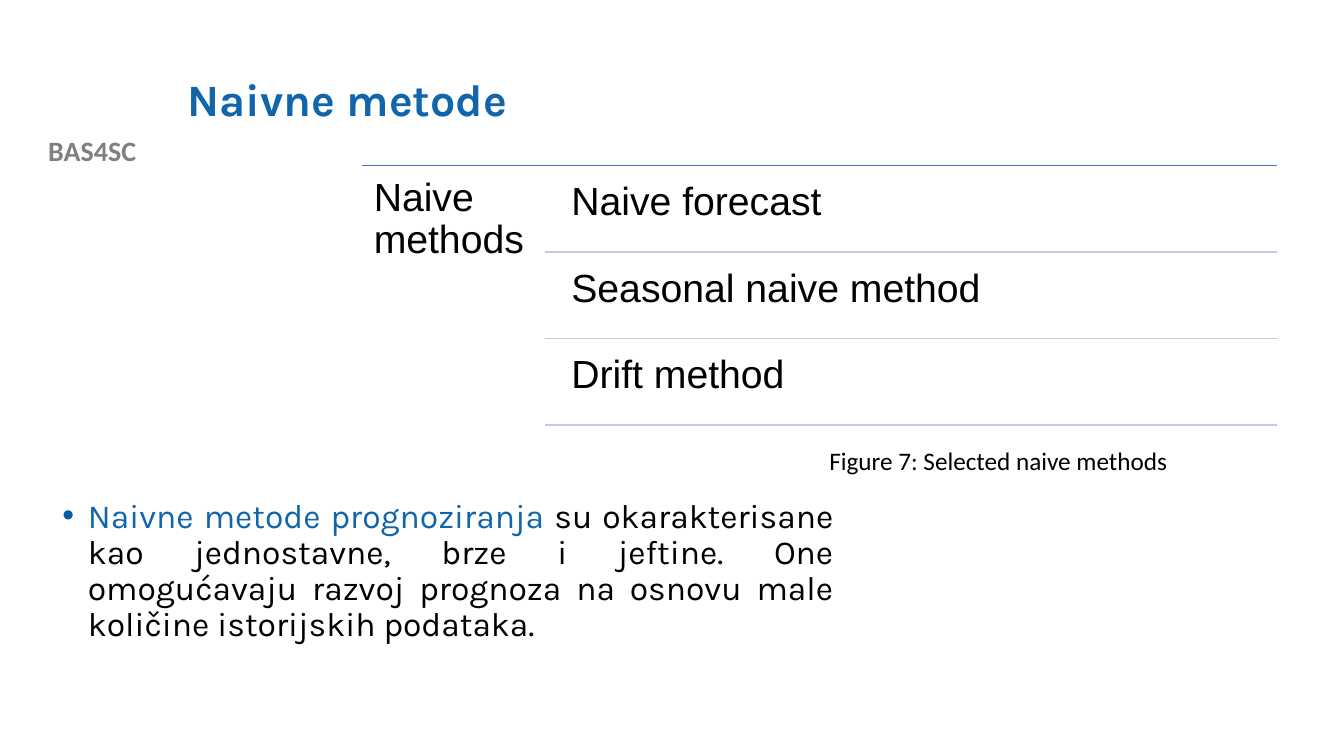
from dataclasses import dataclass

import lxml.etree
import pptx
import pptx.dml.color
import pptx.enum.shapes
import pptx.enum.text
import pptx.oxml.ns
import pptx.slide
import pptx.text.text
import pptx.util

Cm = pptx.util.Cm
Pt = pptx.util.Pt
qn = pptx.oxml.ns.qn
PP_ALIGN = pptx.enum.text.PP_ALIGN

BLUE = "1065AB"
BLACK = "000000"
RULE_RIGHT = 32.18
FIRST_RULE = 4.17
ROW_PITCH = 2.18


@dataclass(frozen=True)
class Box:
    left: float
    top: float
    width: float
    height: float


@dataclass(frozen=True)
class Label:
    text: str
    box: Box
    size: float
    font: str
    color: str = BLACK
    bold: bool = False
    align: PP_ALIGN = PP_ALIGN.LEFT
    inset: float | None = None
    line_spacing: float = 1.0


def rgb(value: str) -> pptx.dml.color.RGBColor:
    return pptx.dml.color.RGBColor.from_string(value)


def place(shape, box: Box) -> None:
    shape.left, shape.top = Cm(box.left), Cm(box.top)
    shape.width, shape.height = Cm(box.width), Cm(box.height)


def style(font: pptx.text.text.Font, name: str, size: float, color: str,
          bold: bool = False) -> None:
    font.name, font.size, font.bold = name, Pt(size), bold
    font.color.rgb = rgb(color)


def add_label(slide: pptx.slide.Slide, label: Label) -> None:
    box = label.box
    frame = slide.shapes.add_textbox(
        Cm(box.left), Cm(box.top), Cm(box.width), Cm(box.height)).text_frame
    frame.word_wrap = True
    if label.inset is not None:
        frame.margin_left = frame.margin_right = Cm(label.inset)
        frame.margin_top = frame.margin_bottom = Cm(label.inset)
    frame.text = label.text
    line = frame.paragraphs[0]
    line.alignment = label.align
    line.line_spacing = label.line_spacing
    style(line.runs[0].font, label.font, label.size, label.color, label.bold)


def add_rule(slide: pptx.slide.Slide, left: float, top: float, color: str) -> None:
    rule = slide.shapes.add_connector(
        pptx.enum.shapes.MSO_CONNECTOR.STRAIGHT,
        Cm(left), Cm(top), Cm(RULE_RIGHT), Cm(top))
    rule.line.color.rgb = rgb(color)
    rule.line.width = Pt(1)
    lxml.etree.SubElement(rule._element.spPr, qn("a:effectLst"))


def add_bullet(paragraph: pptx.text.text._Paragraph, color: str) -> None:
    properties = paragraph._p.get_or_add_pPr()
    properties.set("marL", str(Cm(0.64)))
    properties.set("indent", str(Cm(-0.64)))
    bullet_color = lxml.etree.SubElement(properties, qn("a:buClr"))
    lxml.etree.SubElement(bullet_color, qn("a:srgbClr")).set("val", color)
    lxml.etree.SubElement(properties, qn("a:buFont")).set("typeface", "Arial")
    lxml.etree.SubElement(properties, qn("a:buChar")).set("char", "•")


def fill_title(slide: pptx.slide.Slide) -> None:
    title = slide.shapes.title
    place(title, Box(4.47, 1.02, 27.08, 3.1))
    frame = title.text_frame
    frame.text = "Naivne metode"
    frame.auto_size = pptx.enum.text.MSO_AUTO_SIZE.NONE
    frame.vertical_anchor = pptx.enum.text.MSO_ANCHOR.MIDDLE
    heading = frame.paragraphs[0]
    heading.alignment = PP_ALIGN.LEFT
    heading.line_spacing = 0.9
    style(heading.runs[0].font, "Karla", 32, BLUE, True)


def fill_body(slide: pptx.slide.Slide) -> None:
    body = slide.placeholders[1]
    place(body, Box(1.32, 12.45, 19.94, 5.59))
    frame = body.text_frame
    frame.auto_size = pptx.enum.text.MSO_AUTO_SIZE.NONE
    description = frame.paragraphs[0]
    add_bullet(description, "015BA6")
    description.alignment = PP_ALIGN.JUSTIFY
    description.line_spacing = 0.9
    description.space_before = Pt(0)
    for text, color in (
        ("Naivne metode prognoziranja ", BLUE),
        ("su okarakterisane kao jednostavne, brze i jeftine. One omogućavaju "
         "razvoj prognoza na osnovu male količine istorijskih podataka.", BLACK),
    ):
        run = description.add_run()
        run.text = text
        style(run.font, "Karla", 24, color)


def add_method_list(slide: pptx.slide.Slide) -> None:
    add_rule(slide, 9.12, FIRST_RULE, "4472C4")
    add_label(slide, Label("Naive methods", Box(9.12, FIRST_RULE, 4.62, 6.63),
                           28, "Arial", inset=0.3, line_spacing=0.9))
    methods = ("Naive forecast", "Seasonal naive method", "Drift method")
    for row, method in enumerate(methods):
        top = FIRST_RULE + row * ROW_PITCH
        add_label(slide, Label(method, Box(14.1, top + 0.11, 18.08, 2.07),
                               28, "Arial", inset=0.3, line_spacing=0.9))
        add_rule(slide, 13.74, top + ROW_PITCH, "C1C9E4")


def main() -> None:
    deck = pptx.Presentation()
    deck.slide_width, deck.slide_height = Cm(33.87), Cm(19.05)
    slide = deck.slides.add_slide(deck.slide_layouts[1])
    add_label(slide, Label("BAS4SC", Box(0, 3.25, 4.65, 1.12), 20, "Calibri",
                           "808080", True, PP_ALIGN.CENTER))
    fill_title(slide)
    fill_body(slide)
    add_label(slide, Label("Figure 7: Selected naive methods",
                           Box(20.65, 11.1, 9.19, 1.02), 18, "Calibri"))
    add_method_list(slide)
    deck.save("out.pptx")


if __name__ == "__main__":
    main()
